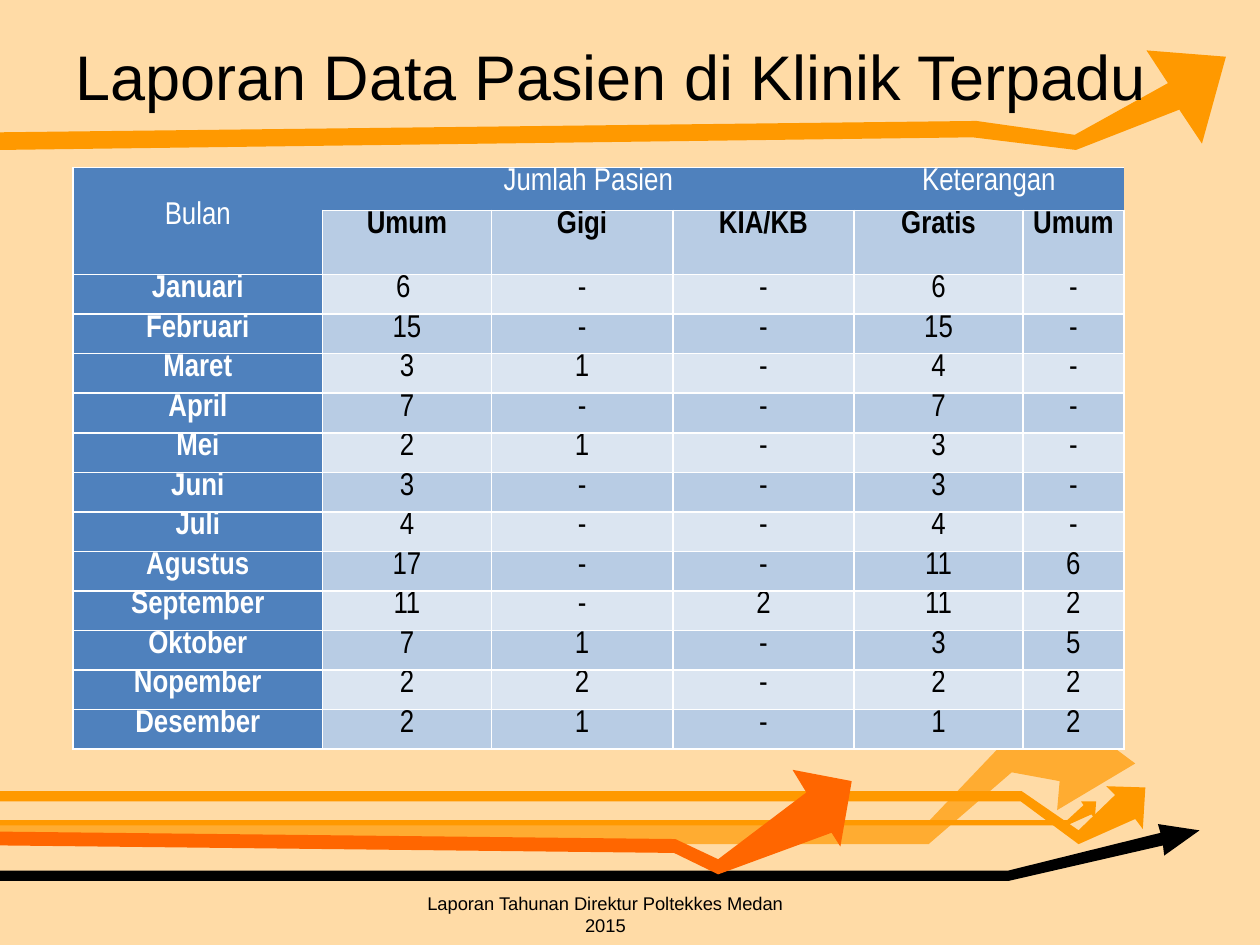
import pptx
import pptx.dml.color
import pptx.enum.text
import pptx.oxml
import pptx.oxml.ns
import pptx.util

Inches, Pt = pptx.util.Inches, pptx.util.Pt
CENTER = pptx.enum.text.PP_ALIGN.CENTER
MIDDLE = pptx.enum.text.MSO_ANCHOR.MIDDLE
TOP = pptx.enum.text.MSO_ANCHOR.TOP

WHITE, BLACK, ORANGE = "FFFFFF", "000000", "FF9900"
BLUE, BAND_DARK, BAND_LIGHT = "4F81BD", "B8CCE4", "DBE5F1"

ARROWS = [
    ("FFAC31", [(0, 6.53), (7.36, 6.53), (7.96, 5.9), (8.43, 5.89), (8.45, 5.64), (9.01, 6.06),
                (8.39, 6.43), (8.41, 6.2), (8.03, 6.13), (7.37, 6.7), (0, 6.7)]),
    (ORANGE, [(0, 6.51), (8.47, 6.51), (8.6, 6.39), (8.58, 6.36), (8.7, 6.36), (8.69, 6.5),
              (8.66, 6.46), (8.67, 6.46), (8.47, 6.55), (0, 6.55)]),
    (ORANGE, [(0, 6.28), (8.11, 6.28), (8.56, 6.59), (8.85, 6.31), (8.78, 6.24), (9.09, 6.25),
              (9.07, 6.58), (9.01, 6.5), (8.56, 6.7), (8.1, 6.36), (0, 6.36)]),
    (BLACK, [(0, 6.91), (8, 6.91), (9.21, 6.61), (9.19, 6.54), (9.52, 6.59), (9.24, 6.79),
             (9.23, 6.71), (8.01, 6.99), (0, 6.99)]),
    ("FF6600", [(-0.05, 6.71), (5.35, 6.77), (5.7, 6.94), (6.6, 6.61), (6.67, 6.72), (6.76, 6.2),
                (6.29, 6.11), (6.4, 6.29), (5.7, 6.82), (5.36, 6.66), (-0.08, 6.6)]),
    (ORANGE, [(0, 1.19), (7.72, 1.09), (8.54, 1.19), (9.36, 0.87), (9.54, 1.14), (9.73, 0.45),
              (9.1, 0.4), (9.27, 0.66), (8.53, 1.07), (7.75, 0.96), (0, 1.05)]),
]

TEXTS = [
    ("Laporan Data Pasien di Klinik Terpadu", (0.5, 0.28, 9.07, 0.63), 36, None, MIDDLE),
    ("Laporan Tahunan Direktur Poltekkes Medan 2015", (3.22, 7.03, 3.17, 0.31), 10.5, CENTER, TOP),
]

ROWS = [
    ("Bulan", "Jumlah Pasien", "", "", "Keterangan", ""),
    ("", "Umum", "Gigi", "KIA/KB", "Gratis", "Umum"),
    ("Januari", "6 ", "-", "-", "6", "-"),
    ("Februari", "15", "-", "-", "15", "-"),
    ("Maret", "3", "1", "-", "4", "-"),
    ("April", "7", "-", "-", "7", "-"),
    ("Mei", "2", "1", "-", "3", "-"),
    ("Juni", "3", "-", "-", "3", "-"),
    ("Juli", "4", "-", "-", "4", "-"),
    ("Agustus", "17", "-", "-", "11", "6"),
    ("September", "11", "-", "2", "11", "2"),
    ("Oktober", "7", "1", "-", "3", "5"),
    ("Nopember", "2", "2", "-", "2", "2"),
    ("Desember", "2", "1", "-", "1", "2"),
]
MERGES = [((0, 0), (1, 0)), ((0, 1), (0, 3)), ((0, 4), (0, 5))]
TABLE_LEFT, TABLE_TOP, TABLE_HEIGHT = 0.58, 1.33, 4.62
COLUMN_WIDTHS = [1.98, 1.34, 1.44, 1.44, 1.34, 0.8]
HEADER_HEIGHTS = [0.34, 0.51]
NO_STYLE = "{2D5ABB26-0587-4C30-8999-92F81FD0307C}"


def color(value):
    return pptx.dml.color.RGBColor.from_string(value)


def apply(target, values):
    for name, value in values.items():
        setattr(target, name, value)


def write(paragraph, text, hue, **values):
    span = paragraph.add_run()
    span.text = text
    apply(span.font, values)
    span.font.color.rgb = color(hue)


def add_arrow(page, hue, points):
    start, *others = [(Inches(x), Inches(y)) for x, y in points]
    builder = page.shapes.build_freeform(*start)
    builder.add_line_segments(others, close=True)
    arrow = builder.convert_to_shape()
    arrow.shadow.inherit = False
    arrow.fill.solid()
    arrow.fill.fore_color.rgb = color(hue)
    arrow.line.fill.background()


def add_text(page, text, place, size, alignment, anchor):
    box = page.shapes.add_textbox(*map(Inches, place))
    apply(box.text_frame, {"word_wrap": True, "vertical_anchor": anchor})
    paragraph = box.text_frame.paragraphs[0]
    paragraph.alignment = alignment
    write(paragraph, text, BLACK, name="Arial", size=Pt(size))


def add_borders(cell, sides):
    for side in "LRTB":
        paint = f'<a:solidFill><a:srgbClr val="{WHITE}"/></a:solidFill>' if side in sides else "<a:noFill/>"
        cell._tc.get_or_add_tcPr().append(pptx.oxml.parse_xml(
            f'<a:ln{side} {pptx.oxml.ns.nsdecls("a")} w="{Pt(1)}">{paint}</a:ln{side}>'))


def cell_look(row, column):
    if row == 0 or column == 0:
        return BLUE, WHITE, row > 1
    return (BAND_DARK if row % 2 else BAND_LIGHT), BLACK, row == 1


def border_sides(row, column):
    if row > 1 or (row == 1 and column > 0):
        return "LRTB"
    return "TB" + ("L" if column == 0 else "") + ("R" if column == len(COLUMN_WIDTHS) - 1 else "")


def add_table(page):
    body_height = (TABLE_HEIGHT - sum(HEADER_HEIGHTS)) / (len(ROWS) - len(HEADER_HEIGHTS))
    heights = HEADER_HEIGHTS + [body_height] * (len(ROWS) - len(HEADER_HEIGHTS))
    frame = page.shapes.add_table(
        len(ROWS), len(COLUMN_WIDTHS), Inches(TABLE_LEFT), Inches(TABLE_TOP),
        Inches(sum(COLUMN_WIDTHS)), Inches(TABLE_HEIGHT))
    table = frame.table
    apply(table, {"first_row": False, "horz_banding": False})
    table._tbl.tblPr.find(pptx.oxml.ns.qn("a:tableStyleId")).text = NO_STYLE
    for column, width in zip(table.columns, COLUMN_WIDTHS):
        column.width = Inches(width)
    for row, height in zip(table.rows, heights):
        row.height = Inches(height)
    for start, end in MERGES:
        table.cell(*start).merge(table.cell(*end))
    for row, texts in enumerate(ROWS):
        for column, text in enumerate(texts):
            cell = table.cell(row, column)
            fill, hue, bold = cell_look(row, column)
            apply(cell, {"margin_left": Inches(0.07), "margin_right": Inches(0.07),
                         "margin_top": 0, "margin_bottom": 0})
            add_borders(cell, border_sides(row, column))
            cell.fill.solid()
            cell.fill.fore_color.rgb = color(fill)
            paragraph = cell.text_frame.paragraphs[0]
            apply(paragraph, {"alignment": CENTER, "line_spacing": 1.0})
            if text:
                write(paragraph, text, hue, name="Arial Narrow", size=Pt(18), bold=bold)
    apply(table.cell(0, 0), {"vertical_anchor": MIDDLE, "margin_bottom": Inches(0.08)})


def main():
    deck = pptx.Presentation()
    apply(deck, {"slide_width": Inches(10), "slide_height": Inches(7.5)})
    page = deck.slides.add_slide(deck.slide_layouts[6])
    page.background.fill.solid()
    page.background.fill.fore_color.rgb = color("FFDBA6")
    for hue, points in ARROWS:
        add_arrow(page, hue, points)
    title, footer = TEXTS
    add_text(page, *title)
    add_table(page)
    add_text(page, *footer)
    deck.save("out.pptx")


if __name__ == "__main__":
    main()
